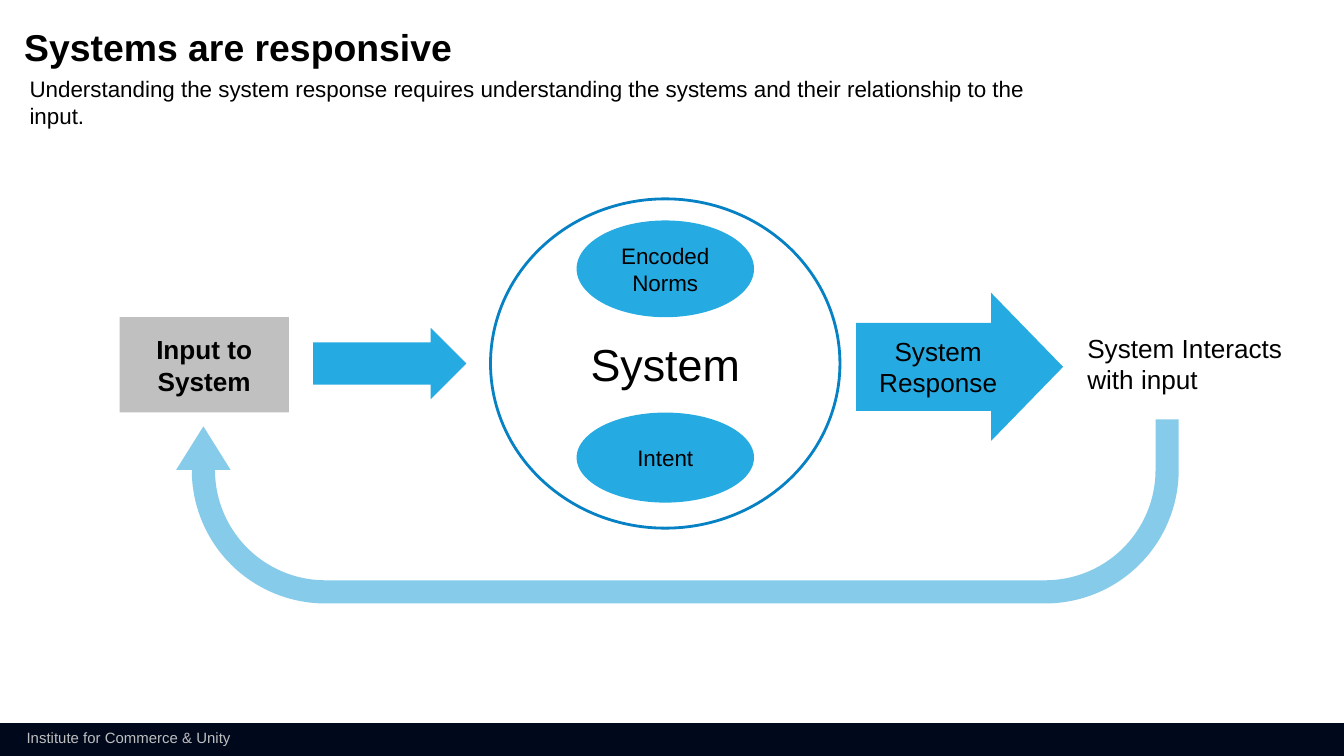
from lxml.etree import SubElement
from pptx import Presentation
from pptx.dml.color import RGBColor
from pptx.enum.shapes import MSO_SHAPE as Shape
from pptx.enum.text import MSO_ANCHOR as Anchor, MSO_AUTO_SIZE as AutoSize, PP_ALIGN as Align
from pptx.oxml.ns import qn
from pptx.util import Inches, Pt

COLORS = {"black": "000000", "navy": "00081C", "footer": "BFBFBF", "gray": "A6A6A6",
          "blue": "25AAE2", "outline": "0681C4", "pale": "86CBE9"}

TITLE = "Systems are responsive"
SUBTITLE = "Understanding the system response requires understanding the systems and their relationship to the input."
FOOTER = "Institute for Commerce & Unity"
INTERACTION = "System Interacts with input"

DIAGRAM = [
    dict(kind=Shape.RIGHT_ARROW, box=(6.37, 2.18, 1.54, 1.1), fill="blue", text="System Response", size=14,
         adjust=(0.595, 0.486)),
    dict(kind=Shape.RECTANGLE, box=(0.89, 2.36, 1.26, 0.71), fill="gray", alpha=70, text="Input to System",
         size=14, bold=True),
    dict(kind=Shape.OVAL, box=(3.65, 1.48, 2.6, 2.45), line="outline", text="System", size=24),
    dict(kind=Shape.OVAL, box=(4.29, 1.64, 1.32, 0.72), fill="blue", text="Encoded Norms", size=12),
    dict(kind=Shape.OVAL, box=(4.29, 3.07, 1.32, 0.67), fill="blue", text="Intent", size=12),
    dict(kind=Shape.RIGHT_ARROW, box=(2.33, 2.44, 1.14, 0.53), fill="blue", adjust=(0.595, 0.5)),
    dict(kind=Shape.U_TURN_ARROW, box=(1.31, 3.12, 7.46, 1.37), fill="pale", rotation=180,
         adjust=(0.126, 0.148, 0.237, 0.725, 0.962)),
]


def rgb(name):
    return RGBColor.from_string(COLORS[name])


def write(frame, text, size, color="black", bold=False, align=Align.LEFT, anchor=Anchor.TOP, insets=(0.04, 0.02)):
    frame.auto_size = AutoSize.NONE
    frame.word_wrap = True
    frame.vertical_anchor = anchor
    frame.margin_left = frame.margin_right = Inches(insets[0])
    frame.margin_top = frame.margin_bottom = Inches(insets[1])
    frame.text = text
    paragraph = frame.paragraphs[0]
    paragraph.alignment = align
    font = paragraph.font
    font.name, font.size, font.bold = "Arial", Pt(size), bold
    font.color.rgb = rgb(color)
    return paragraph


def add_label(slide, box, text, size, **style):
    label = slide.shapes.add_textbox(*map(Inches, box))
    write(label.text_frame, text, size, **style)


def add_part(slide, kind, box, fill=None, alpha=None, line=None, text="", size=12, bold=False,
             adjust=(), rotation=0):
    part = slide.shapes.add_shape(kind, *map(Inches, box))
    part.shadow.inherit = False
    part.rotation = rotation
    for index, value in enumerate(adjust):
        part.adjustments[index] = value
    if fill:
        part.fill.solid()
        part.fill.fore_color.rgb = rgb(fill)
    else:
        part.fill.background()
    if alpha:
        color = part.fill._xPr.find(qn("a:solidFill"))[0]
        SubElement(color, qn("a:alpha")).set("val", str(alpha * 1000))
    if line:
        part.line.color.rgb = rgb(line)
        part.line.width = Pt(1.5)
    else:
        part.line.fill.background()
    if text:
        write(part.text_frame, text, size, bold=bold, align=Align.CENTER, anchor=Anchor.MIDDLE)


def main():
    """Build the slide on how systems respond to input."""
    deck = Presentation()
    deck.slide_width = Inches(10)
    deck.slide_height = deck.slide_width * 9 // 16
    slide = deck.slides.add_slide(deck.slide_layouts[5])

    title = slide.shapes.title
    title.left, title.top, title.width, title.height = map(Inches, (0.18, 0.22, 4.83, 0.3))
    write(title.text_frame, TITLE, 20, bold=True, insets=(0, 0)).line_spacing = 0.9

    add_part(slide, Shape.RECTANGLE, (0, 5.38, 10, 0.25), fill="navy")
    add_label(slide, (0.1, 5.37, 1.8, 0.24), FOOTER, 8, color="footer", insets=(0.1, 0.05))
    add_label(slide, (0.18, 0.54, 7.93, 0.24), SUBTITLE, 12)
    for part in DIAGRAM:
        add_part(slide, **part)
    add_label(slide, (8.05, 2.45, 1.7, 0.51), INTERACTION, 14)

    deck.save("out.pptx")


if __name__ == "__main__":
    main()
